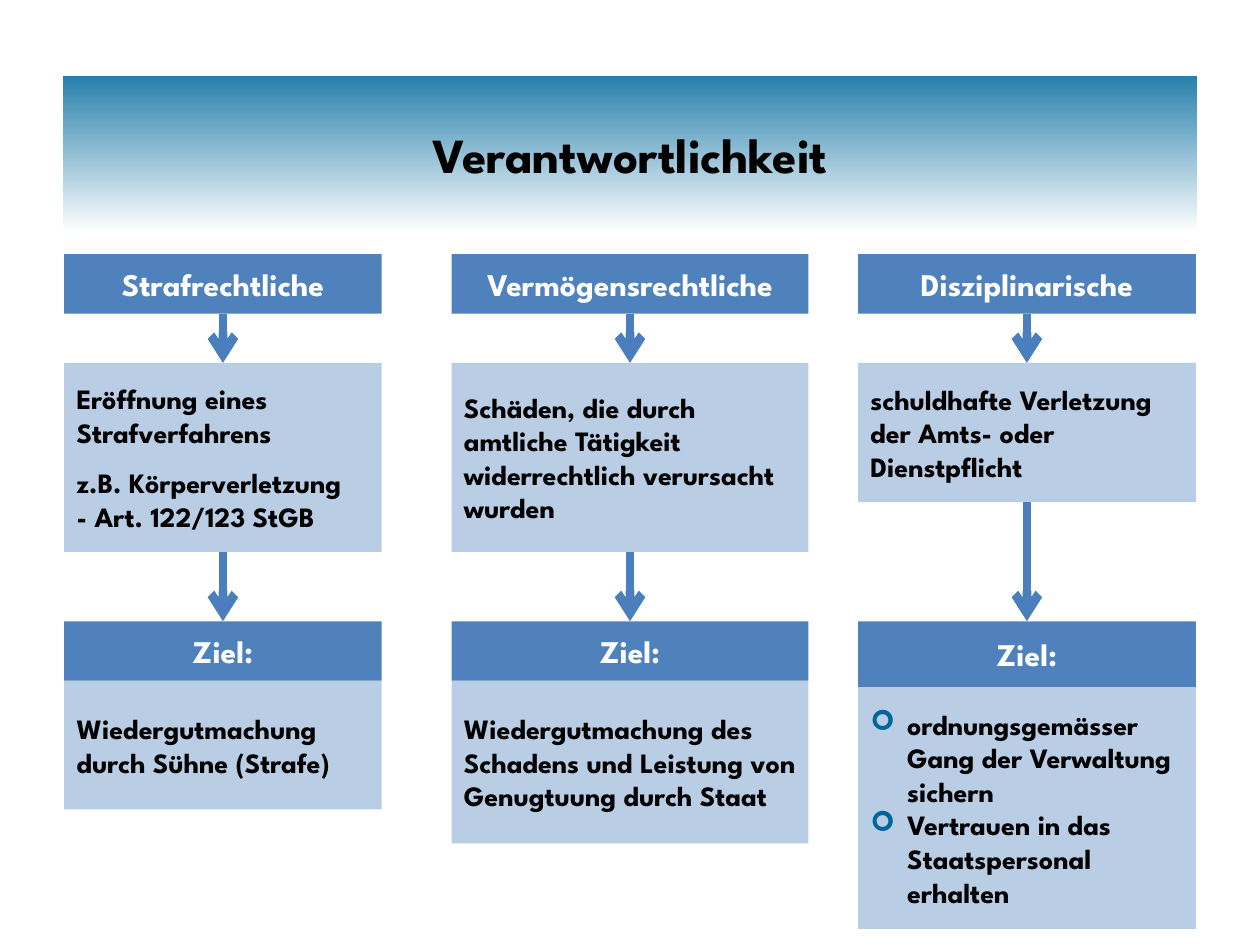
from lxml.etree import SubElement
from pptx import Presentation
from pptx.dml.color import RGBColor
from pptx.enum.shapes import MSO_CONNECTOR, MSO_SHAPE
from pptx.enum.text import MSO_ANCHOR, PP_ALIGN
from pptx.oxml.ns import qn
from pptx.util import Pt

FONT = "League Spartan"
BLACK = RGBColor(0, 0, 0)
WHITE = RGBColor(255, 255, 255)
BLUE = RGBColor(0x4F, 0x81, 0xBD)
LIGHT_BLUE = RGBColor(0xB9, 0xCD, 0xE5)
ARROW_BLUE = RGBColor(0x4B, 0x7E, 0xBC)
TITLE_BLUE = RGBColor(0x28, 0x80, 0xAC)
BULLET_COLOR = "006699"

TITLE = "Verantwortlichkeit"
GOAL = "Ziel:"
COLUMNS = [
    {"left": 36.7, "width": 181.4, "heading": "Strafrechtliche",
     "facts": ["Eröffnung eines Strafverfahrens", "z.B. Körperverletzung",
               "- Art. 122/123 StGB"],
     "facts_height": 108, "spaced": 1, "goal_height": 34,
     "goals": ["Wiedergutmachung durch Sühne (Strafe)"], "goals_height": 73.5},
    {"left": 258, "width": 204, "heading": "Vermögensrechtliche",
     "facts": ["Schäden, die durch amtliche Tätigkeit widerrechtlich verursacht wurden"],
     "facts_height": 108, "goal_height": 34,
     "goals": ["Wiedergutmachung des Schadens und Leistung von Genugtuung durch Staat"],
     "goals_height": 93},
    {"left": 490.3, "width": 193, "heading": "Disziplinarische",
     "facts": ["schuldhafte Verletzung der Amts- oder Dienstpflicht"],
     "facts_height": 79.5, "goal_height": 37.5, "bulleted": True,
     "goals": ["ordnungsgemässer Gang der Verwaltung sichern",
               "Vertrauen in das Staatspersonal erhalten"],
     "goals_height": 138.3},
]
HEADING_TOP, HEADING_HEIGHT = 145.2, 34
FACTS_TOP, GOAL_TOP = 207.4, 355


def format_text(text_frame, size, color, alignment):
    text_frame.word_wrap = True
    text_frame.vertical_anchor = MSO_ANCHOR.MIDDLE
    for paragraph in text_frame.paragraphs:
        paragraph.alignment = alignment
        for run in paragraph.runs:
            run.font.name = FONT
            run.font.size = Pt(size)
            run.font.bold = True
            run.font.color.rgb = color


def add_box(slide, column, top, height, lines, header=False):
    box = slide.shapes.add_shape(MSO_SHAPE.RECTANGLE, Pt(column["left"]), Pt(top),
                                 Pt(column["width"]), Pt(height))
    box.shadow.inherit = False
    box.fill.solid()
    box.fill.fore_color.rgb = BLUE if header else LIGHT_BLUE
    box.line.fill.background()
    box.text_frame.text = "\n".join(lines)
    if header:
        format_text(box.text_frame, 18, WHITE, PP_ALIGN.CENTER)
    else:
        format_text(box.text_frame, 16, BLACK, PP_ALIGN.LEFT)
    return box


def add_bullet(paragraph):
    properties = paragraph._p.get_or_add_pPr()
    properties.set("marL", str(Pt(21)))
    properties.set("indent", str(-Pt(21)))
    color = SubElement(properties, qn("a:buClr"))
    SubElement(color, qn("a:srgbClr"), val=BULLET_COLOR)
    SubElement(properties, qn("a:buFont"), typeface="Wingdings")
    SubElement(properties, qn("a:buChar"), char="➢")


def add_arrow(slide, upper, lower):
    arrow = slide.shapes.add_connector(MSO_CONNECTOR.STRAIGHT, 0, 0, 0, 0)
    arrow.begin_connect(upper, 2)
    arrow.end_connect(lower, 0)
    arrow.line.color.rgb = ARROW_BLUE
    arrow.line.width = Pt(5)
    SubElement(arrow.line._get_or_add_ln(), qn("a:tailEnd"), type="arrow")
    SubElement(arrow._element.spPr, qn("a:effectLst"))


def add_title(slide):
    title = slide.shapes.title
    title.left, title.top, title.width, title.height = Pt(36), Pt(43.2), Pt(648), Pt(90)
    title.fill.gradient()
    title.fill.gradient_angle = 270
    for stop, color in zip(title.fill.gradient_stops, (TITLE_BLUE, WHITE)):
        stop.color.rgb = color
    title.text_frame.text = TITLE
    format_text(title.text_frame, 28, BLACK, PP_ALIGN.CENTER)


def add_column(slide, column):
    heading = add_box(slide, column, HEADING_TOP, HEADING_HEIGHT, [column["heading"]], True)
    facts = add_box(slide, column, FACTS_TOP, column["facts_height"], column["facts"])
    if "spaced" in column:
        facts.text_frame.paragraphs[column["spaced"]].line_spacing = 1.5
    goals = add_box(slide, column, GOAL_TOP + column["goal_height"],
                    column["goals_height"], column["goals"])
    if column.get("bulleted"):
        for paragraph in goals.text_frame.paragraphs:
            add_bullet(paragraph)
    goal = add_box(slide, column, GOAL_TOP, column["goal_height"], [GOAL], True)
    add_arrow(slide, heading, facts)
    add_arrow(slide, facts, goal)


def main():
    presentation = Presentation()
    presentation.slide_width, presentation.slide_height = Pt(720), Pt(540)
    slide = presentation.slides.add_slide(presentation.slide_layouts[5])
    add_title(slide)
    for column in COLUMNS:
        add_column(slide, column)
    presentation.save("out.pptx")


if __name__ == "__main__":
    main()
